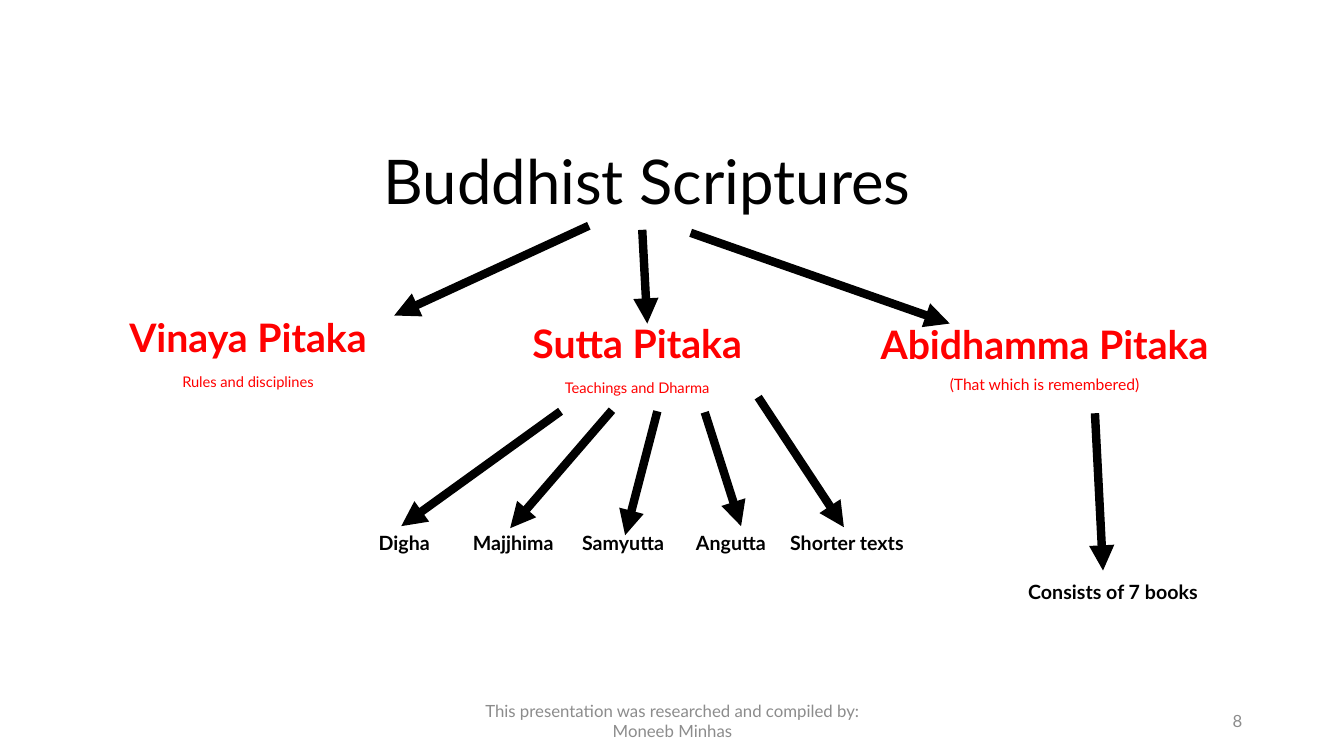
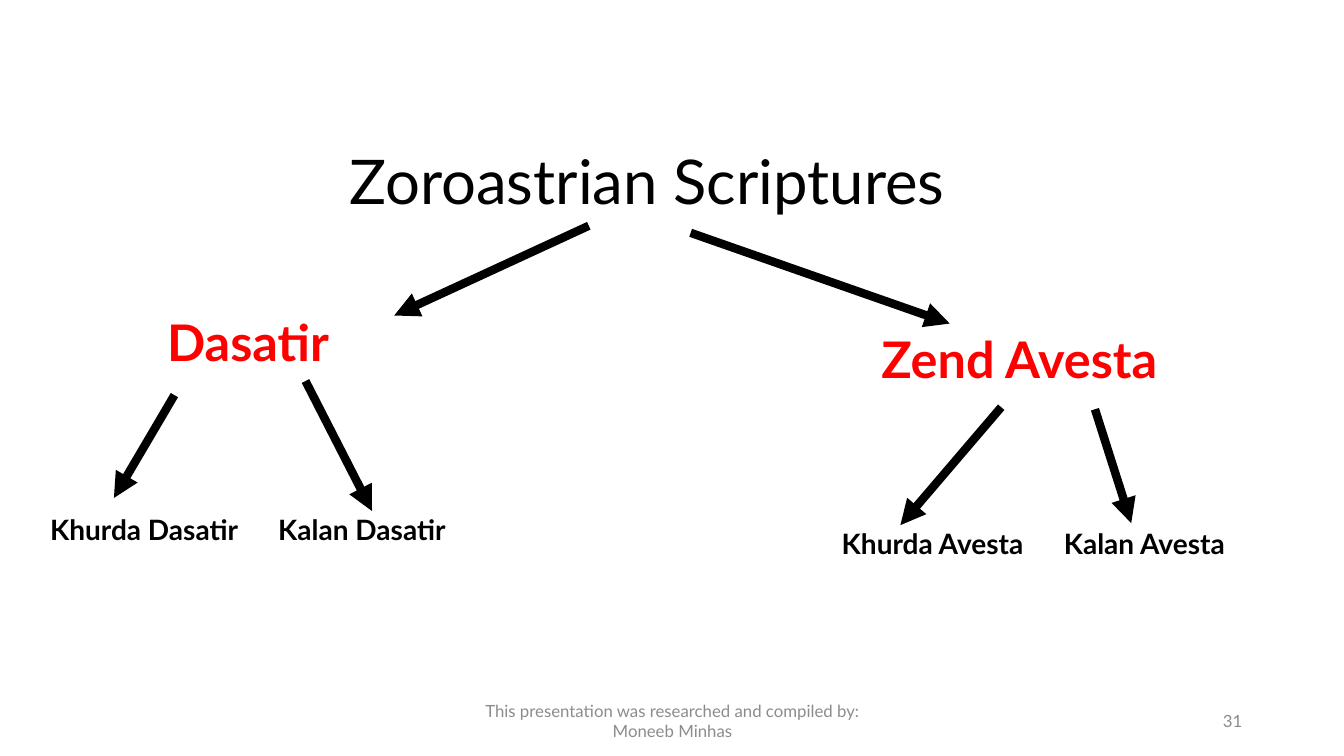
"""Build two slides that show the scriptures of two religions as trees."""
from dataclasses import dataclass

from lxml import etree
from pptx import Presentation
from pptx.dml.color import RGBColor
from pptx.enum.shapes import MSO_CONNECTOR
from pptx.enum.text import MSO_ANCHOR as ANCHOR, MSO_AUTO_SIZE, PP_ALIGN as ALIGN
from pptx.oxml.ns import qn
from pptx.util import Inches, Pt


@dataclass(frozen=True)
class Theme:
    font: str = "Lato"
    black: str = "000000"
    red: str = "FF0000"
    grey: str = "8C8C8C"
    title: float = 44
    footer: float = 12
    arrow: float = 6


T = Theme()
FOOTER = "This presentation was researched and compiled by: Moneeb Minhas"


def add_text(s, lines, at, sp=None, color=T.black, align=ALIGN.CENTER,
             anchor=ANCHOR.TOP, spacing=0.9, before=10):
    """Write (text, size, bold) lines into sp, or into a new text box."""
    sp = sp or s.shapes.add_textbox(0, 0, 0, 0)
    sp.left, sp.top, sp.width, sp.height = map(Inches, at)
    tf = sp.text_frame
    tf.word_wrap = True
    tf.auto_size = MSO_AUTO_SIZE.NONE
    tf.vertical_anchor = anchor
    for i, (text, size, bold) in enumerate(lines):
        p = tf.add_paragraph() if i else tf.paragraphs[0]
        p.alignment, p.line_spacing, p.space_before = align, spacing, Pt(before)
        r = p.add_run()
        r.text = text
        r.font.name, r.font.size, r.font.bold = T.font, Pt(size), bold
        r.font.color.rgb = RGBColor.from_string(color)


def add_arrow(s, x1, y1, x2, y2):
    """Draw a thick arrow from the first point to the second."""
    sp = s.shapes.add_connector(MSO_CONNECTOR.STRAIGHT, *map(Inches, (x1, y1, x2, y2)))
    sp.line.width = Pt(T.arrow)
    sp.line.color.rgb = RGBColor.from_string(T.black)
    etree.SubElement(sp.line._get_or_add_ln(), qn("a:tailEnd"), type="triangle")
    etree.SubElement(sp._element.spPr, qn("a:effectLst"))


LEFT_BRANCH = (5.84, 2.24, 3.91, 3.13)
RIGHT_BRANCH = (6.85, 2.31, 9.42, 3.21)

# Each group is (lines, box, line spacing); each leaf is (text, centre, top, width).
slides = [
    dict(
        title="Buddhist Scriptures", number="8", leaf_size=14,
        groups=[
            ([("Vinaya Pitaka", 28, True), ("Rules and disciplines", 10.5, False)],
             (0.49, 3.11, 3.94, 0.92), 0.9),
            ([("Sutta Pitaka", 28, True), ("Teachings and Dharma", 10.5, False)],
             (4.35, 3.17, 3.94, 0.92), 0.9),
            ([("Abidhamma Pitaka", 28, True), ("(That which is remembered)", 11.2, False)],
             (8.29, 3.26, 4.14, 0.9), 0.7),
        ],
        leaves=[
            ("Digha", 4.01, 5.24, 1), ("Majjhima", 5.09, 5.24, 1.08),
            ("Samyutta", 6.18, 5.24, 1.08), ("Angutta", 7.25, 5.24, 1),
            ("Shorter texts", 8.4, 5.24, 1.4), ("Consists of 7 books", 11.04, 5.73, 2.56),
        ],
        arrows=[
            (6.37, 2.28, 6.42, 3.21), (5.56, 4.08, 3.98, 5.22), (6.07, 4.07, 5.06, 5.24),
            (6.52, 4.08, 6.2, 5.31), (6.99, 4.09, 7.35, 5.22), (7.52, 3.94, 8.37, 5.23),
            (10.86, 4.1, 10.94, 5.66),
        ],
    ),
    dict(
        title="Zoroastrian Scriptures", number="31", leaf_size=20,
        groups=[
            ([("Dasatir", 36, True)], (0.49, 3.11, 3.94, 0.92), 0.9),
            ([("Zend Avesta", 36, True)], (8.14, 3.27, 3.94, 0.92), 0.9),
        ],
        leaves=[
            ("Khurda Dasatir", 1.43, 5.07, 2.14), ("Kalan Dasatir", 3.59, 5.07, 2.14),
            ("Khurda Avesta", 9.25, 5.21, 2.1), ("Kalan Avesta", 11.35, 5.21, 2.1),
        ],
        arrows=[
            (1.73, 3.92, 1.13, 4.94), (3.03, 3.78, 3.69, 5.07),
            (9.93, 4.04, 8.93, 5.21), (10.86, 4.06, 11.22, 5.19),
        ],
    ),
]

prs = Presentation()
prs.slide_width, prs.slide_height = Inches(13.33), Inches(7.5)
title_only = prs.slide_layouts[5]

for tree in slides:
    s = prs.slides.add_slide(title_only)
    add_text(s, [(tree["title"], T.title, False)], (0.67, 1.11, 11.5, 1.45),
             sp=s.shapes.title, anchor=ANCHOR.MIDDLE, before=0)
    for lines, box, spacing in tree["groups"]:
        add_text(s, lines, box, color=T.red, spacing=spacing)
    for text, centre, top, width in tree["leaves"]:
        add_text(s, [(text, tree["leaf_size"], True)], (centre - width / 2, top, width, 0.5))
    for ends in [LEFT_BRANCH, RIGHT_BRANCH, *tree["arrows"]]:
        add_arrow(s, *ends)
    for text, box, align in [(FOOTER, (4.42, 6.95, 4.5, 0.4), ALIGN.CENTER),
                             (tree["number"], (9.42, 6.95, 3, 0.4), ALIGN.RIGHT)]:
        add_text(s, [(text, T.footer, False)], box, color=T.grey, align=align,
                 anchor=ANCHOR.MIDDLE, spacing=1.0, before=0)

prs.save("out.pptx")
